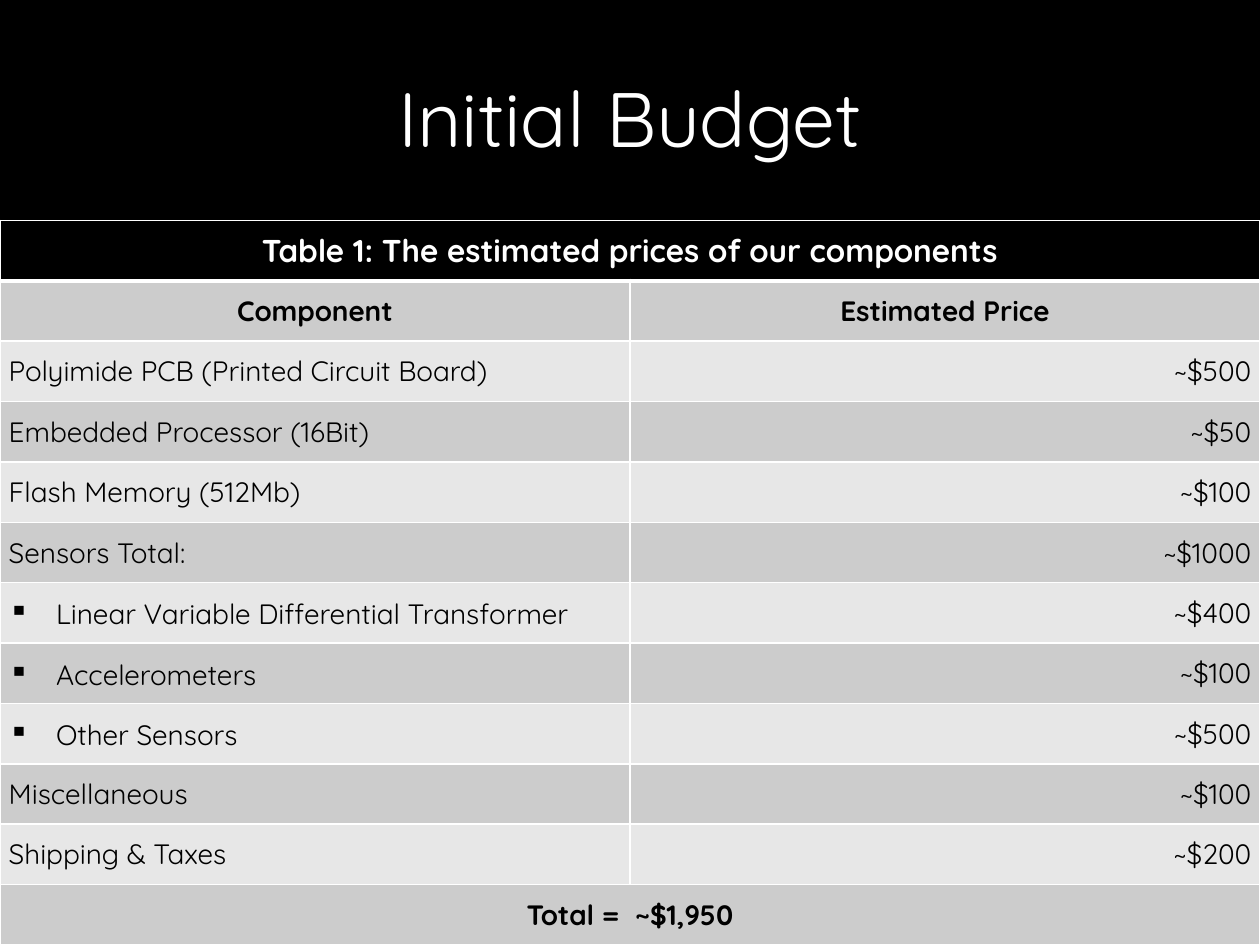
from lxml import etree
from pptx import Presentation
from pptx.dml.color import RGBColor
from pptx.enum.text import MSO_ANCHOR, PP_ALIGN
from pptx.oxml.ns import qn
from pptx.util import Pt

LEFT, CENTER, RIGHT = PP_ALIGN.LEFT, PP_ALIGN.CENTER, PP_ALIGN.RIGHT
MIDDLE = MSO_ANCHOR.MIDDLE
FONT = "Quicksand"
COLORS = {
    "black": "000000",
    "white": "FFFFFF",
    "dark_band": "CCCCCC",
    "light_band": "E7E7E7",
}
CAPTION = "Table 1: The estimated prices of our components"
HEADINGS = ("Component", "Estimated Price")
ITEMS = [  # component, price, bulleted
    ("Polyimide PCB (Printed Circuit Board)", "~$500", False),
    ("Embedded Processor (16Bit)", "~$50", False),
    ("Flash Memory (512Mb)", "~$100", False),
    ("Sensors Total:", "~$1000", False),
    ("Linear Variable Differential Transformer", "~$400", True),
    ("Accelerometers", "~$100", True),
    ("Other Sensors", "~$500", True),
    ("Miscellaneous", "~$100", False),
    ("Shipping & Taxes", "~$200", False),
]
TOTAL = "Total =  ~$1,950"


def write_text(frame, text, size=16, color="black", bold=False, align=LEFT, bullet=False):
    paragraph = frame.paragraphs[0]
    paragraph.alignment = align
    run = paragraph.add_run()
    run.text = text
    run.font.name = FONT
    run.font.size = Pt(size)
    run.font.bold = bold
    run.font.color.rgb = RGBColor.from_string(COLORS[color])
    if bullet:
        paragraph.line_spacing = 1.07
        properties = paragraph._p.get_or_add_pPr()
        properties.set("marL", str(Pt(27)))
        properties.set("indent", str(Pt(-27)))
        etree.SubElement(properties, qn("a:buChar"), char="▪")


def style_cell(cell, fill, bottom_width=1):
    """Set fill, margins, anchor and the four white borders of a cell."""
    cell.vertical_anchor = MIDDLE
    cell.margin_left = cell.margin_right = Pt(5)
    cell.margin_top = cell.margin_bottom = 0
    cell.fill.solid()
    cell.fill.fore_color.rgb = RGBColor.from_string(COLORS[fill])
    properties = cell._tc.get_or_add_tcPr()
    borders = (("a:lnL", 1), ("a:lnR", 1), ("a:lnT", 1), ("a:lnB", bottom_width))
    for position, (tag, width) in enumerate(borders):
        line = etree.Element(qn(tag), w=str(Pt(width)))
        line_fill = etree.SubElement(line, qn("a:solidFill"))
        etree.SubElement(line_fill, qn("a:srgbClr"), val=COLORS["white"])
        properties.insert(position, line)


presentation = Presentation()
presentation.slide_width = Pt(720)
presentation.slide_height = Pt(540)
slide = presentation.slides.add_slide(presentation.slide_layouts[5])
slide.background.fill.solid()
slide.background.fill.fore_color.rgb = RGBColor.from_string(COLORS["black"])

title = slide.shapes.title
title.left, title.top, title.width, title.height = Pt(36), Pt(21.6), Pt(648), Pt(90)
title.text_frame.vertical_anchor = MIDDLE
write_text(title.text_frame, "Initial Budget", size=44, color="white", align=CENTER)

row_count = len(ITEMS) + 3
last_row = row_count - 1
table = slide.shapes.add_table(row_count, 2, 0, Pt(126), Pt(720), Pt(414)).table
table.first_row = table.horz_banding = False
for column in table.columns:
    column.width = Pt(360)
for index, row in enumerate(table.rows):
    row.height = Pt(34.5)
    band = "dark_band" if index % 2 else "light_band"
    for cell in row.cells:
        style_cell(cell, "black" if index == 0 else band, 3 if index == 0 else 1)
for index in (0, last_row):
    table.cell(index, 0).merge(table.cell(index, 1))

write_text(table.cell(0, 0).text_frame, CAPTION, size=18, color="white", bold=True, align=CENTER)
for index, heading in enumerate(HEADINGS):
    write_text(table.cell(1, index).text_frame, heading, bold=True, align=CENTER)
for index, (component, price, bulleted) in enumerate(ITEMS, start=2):
    write_text(table.cell(index, 0).text_frame, component, bullet=bulleted)
    write_text(table.cell(index, 1).text_frame, price, align=RIGHT)
write_text(table.cell(last_row, 0).text_frame, TOTAL, bold=True, align=CENTER)

presentation.save("out.pptx")
